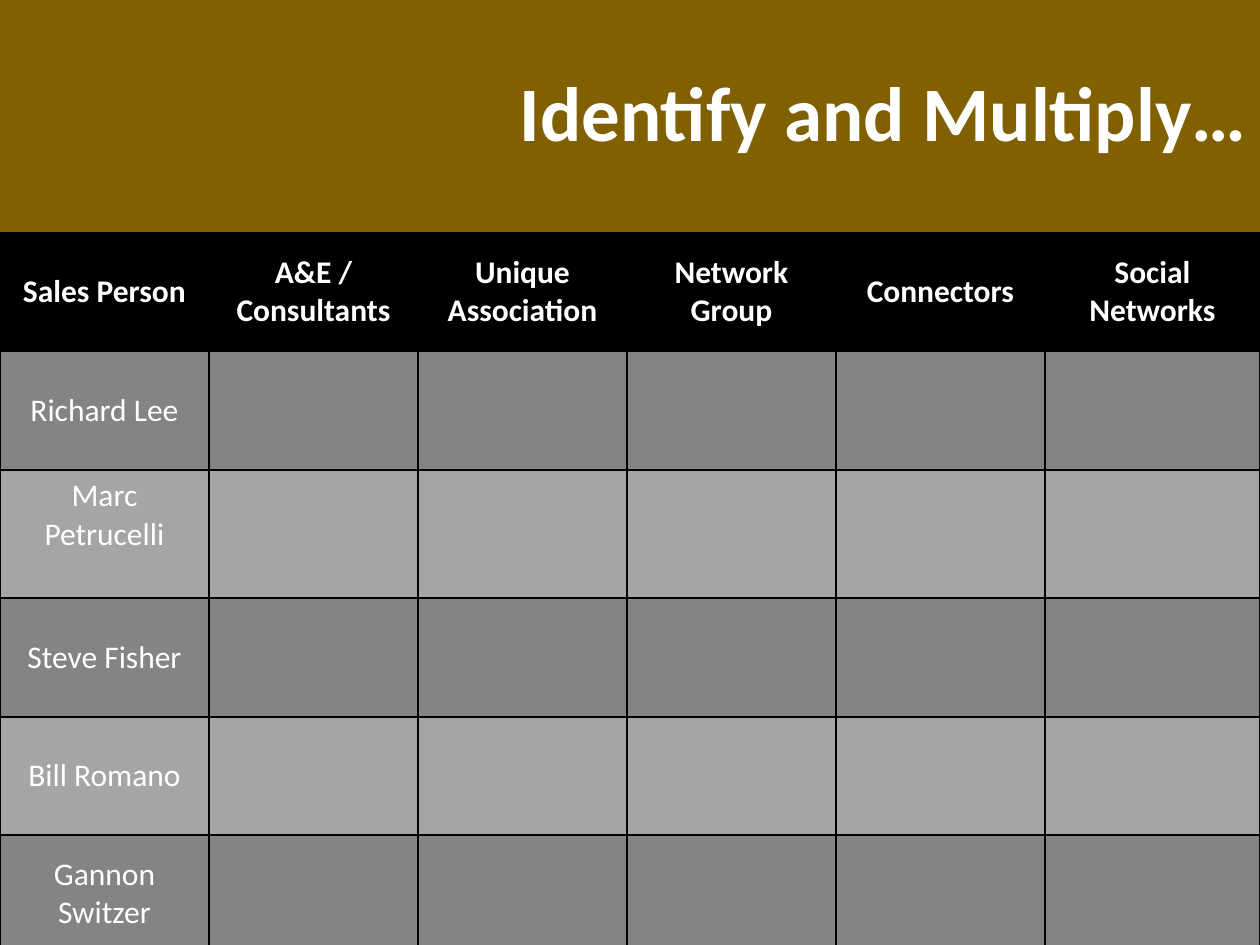
from lxml.etree import SubElement
from pptx import Presentation
from pptx.dml.color import RGBColor
from pptx.enum.shapes import MSO_SHAPE as Shape
from pptx.enum.text import MSO_ANCHOR as Anchor, PP_ALIGN as Align
from pptx.oxml.ns import qn
from pptx.util import Pt

TITLE = "Identify and Multiply…"
HEADERS = ["Sales Person", "A&E / Consultants", "Unique Association",
           "Network Group", "Connectors", "Social Networks"]
PEOPLE = ["Richard Lee", "Marc Petrucelli", "Steve Fisher", "Bill Romano", "Gannon Switzer"]
RAISED_NAME = "Marc Petrucelli"

PAGE_WIDTH, PAGE_HEIGHT = 1260, 945
BANNER_OVERHANG, BANNER_HEIGHT = 16, 233
COLUMN_WIDTHS = [209] * 5 + [215]
ROW_HEIGHTS = [118, 119, 128, 119, 118, 118]
RAISED_MARGIN = 44

FONT = "Calibri"
WHITE = RGBColor(0xFF, 0xFF, 0xFF)
BLACK = RGBColor(0x00, 0x00, 0x00)
BROWN = RGBColor(0x80, 0x60, 0x00)
BANDS = [RGBColor(0x84, 0x84, 0x84), RGBColor(0xA5, 0xA5, 0xA5)]


def px(length):
    return round(length * 914400 / 126)


def format_text(frame, size, bold, align):
    para = frame.paragraphs[0]
    para.alignment = align
    for span in para.runs:
        span.font.name = FONT
        span.font.size = Pt(size)
        span.font.bold = bold
        span.font.color.rgb = WHITE
    return para


def add_borders(cell):
    properties = cell._tc.get_or_add_tcPr()
    for side in ("lnL", "lnR", "lnT", "lnB"):
        line = SubElement(properties, qn(f"a:{side}"), w=str(Pt(1)))
        fill = SubElement(line, qn("a:solidFill"))
        SubElement(fill, qn("a:srgbClr"), val=str(BLACK))


def add_banner(page):
    banner = page.shapes.add_shape(Shape.RECTANGLE, px(-BANNER_OVERHANG), 0,
                                   px(PAGE_WIDTH + BANNER_OVERHANG), px(BANNER_HEIGHT))
    banner.shadow.inherit = False
    banner.fill.solid()
    banner.fill.fore_color.rgb = BROWN
    banner.line.fill.background()
    frame = banner.text_frame
    frame.text = TITLE
    frame.word_wrap = True
    frame.vertical_anchor = Anchor.MIDDLE
    format_text(frame, 44, True, Align.RIGHT).line_spacing = 0.9


def add_sales_table(page):
    rows = [HEADERS] + [[person] + [""] * (len(HEADERS) - 1) for person in PEOPLE]
    table = page.shapes.add_table(len(rows), len(HEADERS), 0, px(BANNER_HEIGHT),
                                  px(sum(COLUMN_WIDTHS)), px(sum(ROW_HEIGHTS))).table
    for column, width in zip(table.columns, COLUMN_WIDTHS):
        column.width = px(width)
    for row, height in zip(table.rows, ROW_HEIGHTS):
        row.height = px(height)
    for r, texts in enumerate(rows):
        for c, text in enumerate(texts):
            cell = table.cell(r, c)
            add_borders(cell)
            cell.fill.solid()
            cell.fill.fore_color.rgb = BANDS[(r - 1) % 2] if r else BLACK
            cell.vertical_anchor = Anchor.MIDDLE
            cell.text_frame.text = text
            format_text(cell.text_frame, 18, r == 0, Align.CENTER)
            if text == RAISED_NAME:
                cell.margin_bottom = px(RAISED_MARGIN)


def main():
    deck = Presentation()
    deck.slide_width, deck.slide_height = px(PAGE_WIDTH), px(PAGE_HEIGHT)
    page = deck.slides.add_slide(deck.slide_layouts[6])
    add_banner(page)
    add_sales_table(page)
    deck.save("out.pptx")


if __name__ == "__main__":
    main()
